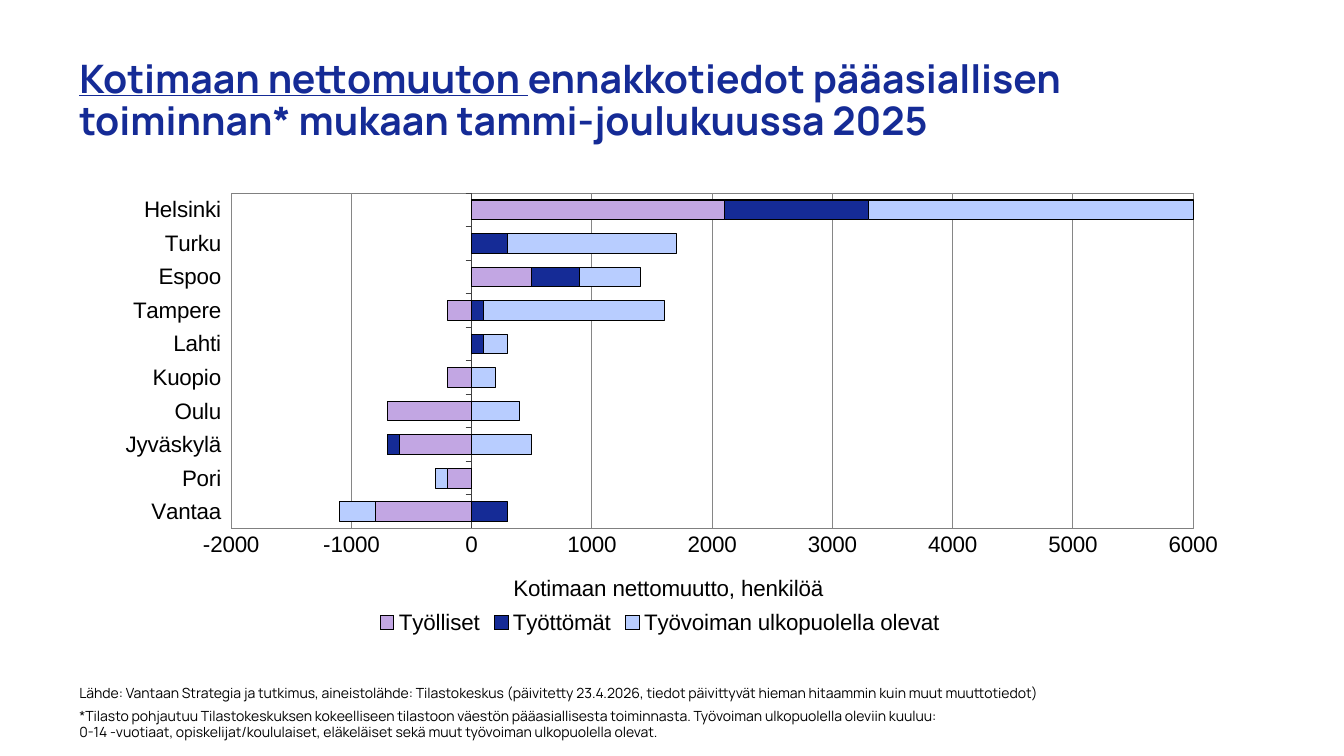
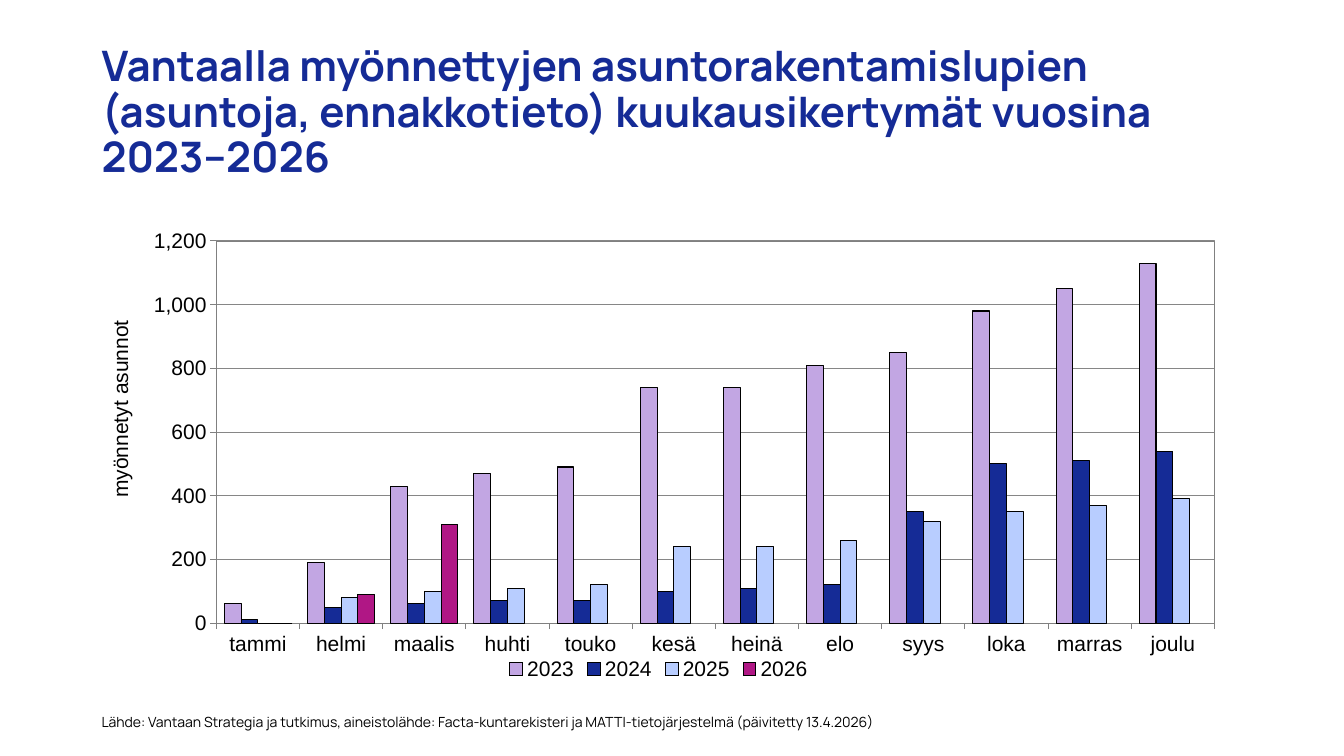
from lxml import etree
from pptx import Presentation
from pptx import util as u
from pptx.chart.data import CategoryChartData
from pptx.dml.color import RGBColor
from pptx.enum import chart as ch, text
from pptx.oxml.ns import qn

COLORS = {"blue": "152B96", "lilac": "C2A6E3", "sky": "B8CDFF",
          "magenta": "B01785", "black": "000000", "grid": "868686",
          "axis": "808080", "zero": "404040"}
SERIES_COLORS = ["lilac", "blue", "sky", "magenta"]
TITLE_FONT, CHART_FONT = "Manrope", "Arial"
LINE_SPACING = 0.9


def rgb(name):
    return RGBColor.from_string(COLORS[name])


def box_cm(box):
    return [u.Cm(v) for v in box]


def set_font(font, size, name, color="black", bold=False):
    font.size, font.name, font.bold = u.Pt(size), name, bold
    font.color.rgb = rgb(color)


def set_line(line, color):
    line.color.rgb = rgb(color)
    line.width = u.Pt(0.75)


def add_text(s, box, paragraphs, size, color="black", bold=False,
             anchor=text.MSO_ANCHOR.TOP, gaps=()):
    """Each paragraph is a list of (text, underlined) runs."""
    tf = s.shapes.add_textbox(*box_cm(box)).text_frame
    tf.word_wrap = True
    tf.vertical_anchor = anchor
    for i, runs in enumerate(paragraphs):
        p = tf.paragraphs[0] if i == 0 else tf.add_paragraph()
        p.line_spacing = LINE_SPACING
        if i in gaps:
            p.space_before = u.Pt(6)
        for words, underlined in runs:
            r = p.add_run()
            r.text = words
            set_font(r.font, size, TITLE_FONT, color, bold)
            r.font.underline = underlined


def add_title(s, box, runs, size):
    add_text(s, box, [runs], size, "blue", True, text.MSO_ANCHOR.MIDDLE)


def add_footnote(s, box, lines, gaps=()):
    add_text(s, box, [[(line, False)] for line in lines], 10, gaps=gaps)


def set_layout(parent, index, **values):
    """Give a chart part a manual layout as fractions of the chart."""
    for old in parent.findall(qn("c:layout")):
        parent.remove(old)
    layout = etree.Element(qn("c:layout"))
    manual = etree.SubElement(layout, qn("c:manualLayout"))
    for tag, value in values.items():
        etree.SubElement(manual, qn("c:" + tag)).set("val", str(value))
    parent.insert(index, layout)


def set_plot(chart, x, y, w, h):
    """Place the inner plot area and outline it."""
    area = chart._chartSpace.find(".//" + qn("c:plotArea"))
    set_layout(area, 0, layoutTarget="inner", xMode="edge", yMode="edge",
               x=x, y=y, w=w, h=h)
    sp_pr = etree.SubElement(area, qn("c:spPr"))
    etree.SubElement(sp_pr, qn("a:noFill"))
    ln = etree.SubElement(sp_pr, qn("a:ln"), w=str(u.Pt(0.75)))
    fill = etree.SubElement(ln, qn("a:solidFill"))
    etree.SubElement(fill, qn("a:srgbClr"), val=COLORS["axis"])


def set_axis_title(axis, words, size, x, y, rotation):
    tf = axis.axis_title.text_frame
    tf._txBody.bodyPr.set("rot", str(rotation * 60000))
    r = tf.paragraphs[0].add_run()
    r.text = words
    set_font(r.font, size, CHART_FONT)
    set_layout(axis.axis_title._element, 1, xMode="edge", yMode="edge", x=x, y=y)


def add_bar_chart(s, box, kind, cats, series, size, gap, overlap, plot, scale):
    data = CategoryChartData()
    data.categories = cats
    for name, values in series:
        data.add_series(name, values)
    chart = s.shapes.add_chart(kind, *box_cm(box), data).chart
    chart.has_title = False
    set_font(chart.font, size, CHART_FONT)
    set_plot(chart, *plot)

    # Legend
    chart.has_legend = True
    chart.legend.position = ch.XL_LEGEND_POSITION.BOTTOM
    chart.legend.include_in_layout = False
    set_font(chart.legend.font, size, CHART_FONT)

    # Bars
    bars = chart.plots[0]
    bars.gap_width, bars.overlap = gap, overlap
    bars.vary_by_categories = False
    for ser, color in zip(bars.series, SERIES_COLORS):
        ser.invert_if_negative = False
        ser.format.fill.solid()
        ser.format.fill.fore_color.rgb = rgb(color)
        set_line(ser.format.line, "black")

    # Axes
    value = chart.value_axis
    value.minimum_scale, value.maximum_scale, value.major_unit = scale
    value.has_major_gridlines = True
    set_line(value.major_gridlines.format.line, "grid")
    for axis in (value, chart.category_axis):
        axis.major_tick_mark = ch.XL_TICK_MARK.OUTSIDE
        axis.minor_tick_mark = ch.XL_TICK_MARK.NONE
        set_line(axis.format.line, "axis")
        set_font(axis.tick_labels.font, size, CHART_FONT)
    return chart


def migration_slide(s):
    add_title(s, (1.75, 0.97, 28.5, 3.18), [
        ("Kotimaan nettomuuton ", True),
        ("ennakkotiedot pääasiallisen toiminnan* mukaan "
         "tammi-joulukuussa 2025", False)], 28)
    cities = ["Vantaa", "Pori", "Jyväskylä", "Oulu", "Kuopio", "Lahti",
              "Tampere", "Espoo", "Turku", "Helsinki"]
    series = [
        ("Työlliset", [-800, -200, -600, -700, -200, 0, -200, 500, 0, 2100]),
        ("Työttömät", [300, 0, -100, 0, 0, 100, 100, 400, 300, 1200]),
        ("Työvoiman ulkopuolella olevat",
         [-300, -100, 500, 400, 200, 200, 1500, 500, 1400, 2700])]
    chart = add_bar_chart(s, (2.03, 4.52, 29.21, 11.58),
                          ch.XL_CHART_TYPE.BAR_STACKED, cities, series, 16,
                          70, 100, (0.13, 0.03, 0.83, 0.73),
                          (-2000, 6000, 1000))
    chart.category_axis.tick_label_position = ch.XL_TICK_LABEL_POSITION.LOW
    set_line(chart.category_axis.format.line, "zero")
    chart.value_axis.major_tick_mark = ch.XL_TICK_MARK.NONE
    set_axis_title(chart.value_axis, "Kotimaan nettomuutto, henkilöä", 16,
                   0.37, 0.85, 0)
    add_footnote(s, (1.75, 17.17, 27.1, 1.57), [
        "Lähde: Vantaan Strategia ja tutkimus, aineistolähde: Tilastokeskus "
        "(päivitetty 23.4.2026, tiedot päivittyvät hieman hitaammin kuin "
        "muut muuttotiedot)",
        "*Tilasto pohjautuu Tilastokeskuksen kokeelliseen tilastoon väestön "
        "pääasiallisesta toiminnasta. Työvoiman ulkopuolella oleviin kuuluu:",
        "0-14 -vuotiaat, opiskelijat/koululaiset, eläkeläiset sekä muut "
        "työvoiman ulkopuolella olevat."], gaps=(1,))


def permits_slide(s):
    add_title(s, (2.31, 1.02, 29.21, 3.68), [
        ("Vantaalla myönnettyjen asuntorakentamislupien (asuntoja, "
         "ennakkotieto) kuukausikertymät vuosina 2023–2026", False)], 30)
    months = ["tammi", "helmi", "maalis", "huhti", "touko", "kesä", "heinä",
              "elo", "syys", "loka", "marras", "joulu"]
    series = [
        ("2023", [60, 190, 430, 470, 490, 740, 740, 810, 850, 980, 1050, 1130]),
        ("2024", [10, 50, 60, 70, 70, 100, 110, 120, 350, 500, 510, 540]),
        ("2025", [0, 80, 100, 110, 120, 240, 240, 260, 320, 350, 370, 390]),
        ("2026", [0, 90, 310] + [None] * 9)]
    chart = add_bar_chart(s, (2.31, 5.36, 28.58, 11.89),
                          ch.XL_CHART_TYPE.COLUMN_CLUSTERED, months, series,
                          15, 96, 0, (0.11, 0.06, 0.88, 0.81), (0, 1200, 200))
    labels = chart.value_axis.tick_labels
    labels.number_format, labels.number_format_is_linked = "#,##0", False
    set_axis_title(chart.value_axis, "myönnetyt asunnot", 15, 0.01, 0.22, -90)
    add_footnote(s, (2.31, 17.91, 22.5, 1.02), [
        "Lähde: Vantaan Strategia ja tutkimus, aineistolähde: "
        "Facta-kuntarekisteri ja MATTI-tietojärjestelmä "
        "(päivitetty 13.4.2026)"])


def main():
    prs = Presentation()
    prs.slide_width, prs.slide_height = u.Cm(33.87), u.Cm(19.05)
    for build in (migration_slide, permits_slide):
        build(prs.slides.add_slide(prs.slide_layouts[6]))
    prs.save("out.pptx")


if __name__ == "__main__":
    main()
